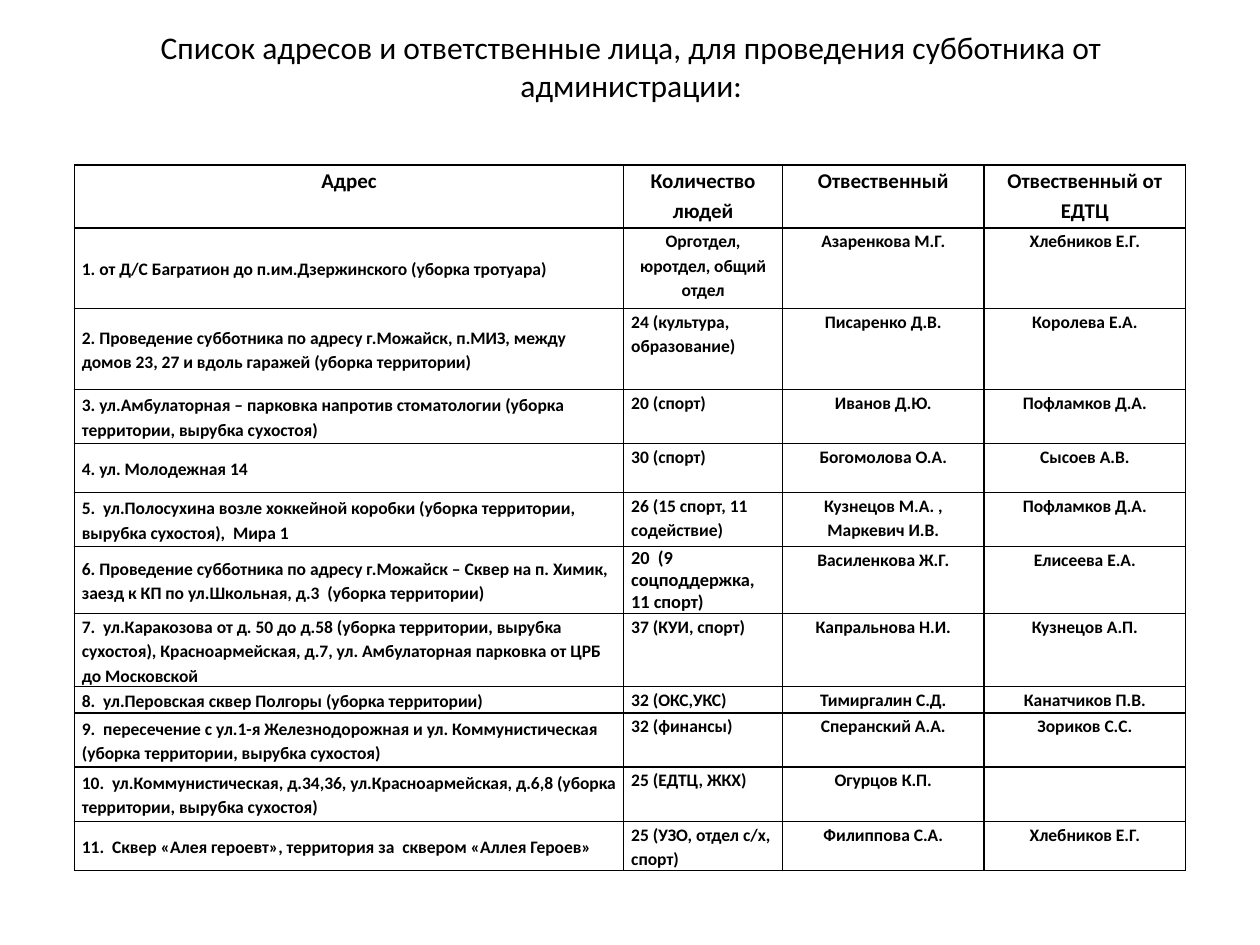
"""Build a slide listing clean-up addresses and the people responsible."""
from lxml import etree
from pptx import Presentation
from pptx.dml.color import RGBColor
from pptx.enum.text import MSO_ANCHOR, PP_ALIGN
from pptx.oxml.ns import qn
from pptx.util import Inches, Pt

LEFT, CENTER = PP_ALIGN.LEFT, PP_ALIGN.CENTER
TOP, MIDDLE = MSO_ANCHOR.TOP, MSO_ANCHOR.MIDDLE
BLACK, WHITE = "000000", "FFFFFF"

COL_WIDTHS = [4.36, 1.26, 1.6, 1.6]
ROW_HEIGHTS = [0.5, 0.64, 0.64, 0.43, 0.39, 0.43, 0.53, 0.58, 0.21, 0.43, 0.43, 0.39]
ROWS = [
    ("Адрес", "Количество людей", "Отвественный", "Отвественный от ЕДТЦ"),
    ("1. от Д/С Багратион до п.им.Дзержинского (уборка тротуара)",
     "Орготдел, юротдел, общий отдел", "Азаренкова М.Г.", "Хлебников Е.Г."),
    ("2. Проведение субботника по адресу г.Можайск, п.МИЗ, между домов 23, 27 "
     "и вдоль гаражей (уборка территории)",
     "24 (культура, образование)", "Писаренко Д.В.", "Королева Е.А."),
    ("3. ул.Амбулаторная – парковка напротив стоматологии (уборка территории, "
     "вырубка сухостоя)",
     "20 (спорт)", "Иванов Д.Ю.", "Пофламков Д.А."),
    ("4. ул. Молодежная 14", "30 (спорт)", "Богомолова О.А.", "Сысоев А.В."),
    ("5.  ул.Полосухина возле хоккейной коробки (уборка территории, "
     "вырубка сухостоя),  Мира 1",
     "26 (15 спорт, 11 содействие)", "Кузнецов М.А. , Маркевич И.В.", "Пофламков Д.А."),
    ("6. Проведение субботника по адресу г.Можайск – Сквер на п. Химик, "
     "заезд к КП по ул.Школьная, д.3  (уборка территории)",
     "20  (9 соцподдержка, 11 спорт)", "Василенкова Ж.Г.", "Елисеева Е.А."),
    ("7.  ул.Каракозова от д. 50 до д.58 (уборка территории, вырубка сухостоя), "
     "Красноармейская, д.7, ул. Амбулаторная парковка от ЦРБ до Московской",
     "37 (КУИ, спорт)", "Капральнова Н.И.", "Кузнецов А.П."),
    ("8.  ул.Перовская сквер Полгоры (уборка территории)",
     "32 (ОКС,УКС)", "Тимиргалин С.Д.", "Канатчиков П.В."),
    ("9.  пересечение с ул.1-я Железнодорожная и ул. Коммунистическая "
     "(уборка территории, вырубка сухостоя)",
     "32 (финансы)", "Сперанский А.А.", "Зориков С.С."),
    ("10.  ул.Коммунистическая, д.34,36, ул.Красноармейская, д.6,8 "
     "(уборка территории, вырубка сухостоя)",
     "25 (ЕДТЦ, ЖКХ)", "Огурцов К.П.", ""),
    ("11.  Сквер «Алея героевт», территория за  сквером «Аллея Героев»",
     "25 (УЗО, отдел с/х, спорт)", "Филиппова С.А.", "Хлебников Е.Г."),
]


def write(tf, text, size, align, bold=False, spacing=1.0):
    p = tf.paragraphs[0]
    p.text = text
    p.alignment = align
    p.line_spacing = spacing
    p.font.name = "Calibri"
    p.font.size = Pt(size)
    p.font.bold = bold
    p.font.color.rgb = RGBColor.from_string(BLACK)


def add_borders(cell):
    tc_pr = cell._tc.get_or_add_tcPr()
    for i, side in enumerate(("lnL", "lnR", "lnT", "lnB")):
        ln = etree.Element(qn(f"a:{side}"), w=str(Pt(1)))
        fill = etree.SubElement(ln, qn("a:solidFill"))
        etree.SubElement(fill, qn("a:srgbClr"), val=BLACK)
        tc_pr.insert(i, ln)


prs = Presentation()
prs.slide_width, prs.slide_height = Inches(10), Inches(7.5)
s = prs.slides.add_slide(prs.slide_layouts[6])

title = s.shapes.add_textbox(Inches(0.51), Inches(0.21), Inches(9), Inches(0.63))
tf = title.text_frame
tf.word_wrap = True
tf.vertical_anchor = MIDDLE
write(tf, "Список адресов и ответственные лица, для проведения субботника от "
      "администрации:", 18, CENTER)

frame = s.shapes.add_table(len(ROWS), len(COL_WIDTHS), Inches(0.59), Inches(1.31),
                           Inches(sum(COL_WIDTHS)), Inches(sum(ROW_HEIGHTS)))
table = frame.table
table.first_row = table.horz_banding = False
for column, width in zip(table.columns, COL_WIDTHS):
    column.width = Inches(width)

for r, (row, height) in enumerate(zip(ROWS, ROW_HEIGHTS)):
    table.rows[r].height = Inches(height)
    for c, text in enumerate(row):
        cell = table.cell(r, c)
        cell.margin_left = cell.margin_right = Inches(0.06)
        cell.margin_top = cell.margin_bottom = 0
        cell.vertical_anchor = MIDDLE if r > 0 and c == 0 else TOP
        cell.fill.solid()
        cell.fill.fore_color.rgb = RGBColor.from_string(WHITE)
        add_borders(cell)
        align = CENTER if r == 0 or c > 1 or (r, c) == (1, 1) else LEFT
        size, spacing = (12 if r == 0 else 10), 1.15
        if (r, c) == (6, 1):
            size, spacing = 10.5, 1.0
        write(cell.text_frame, text, size, align, True, spacing)

prs.save("out.pptx")
